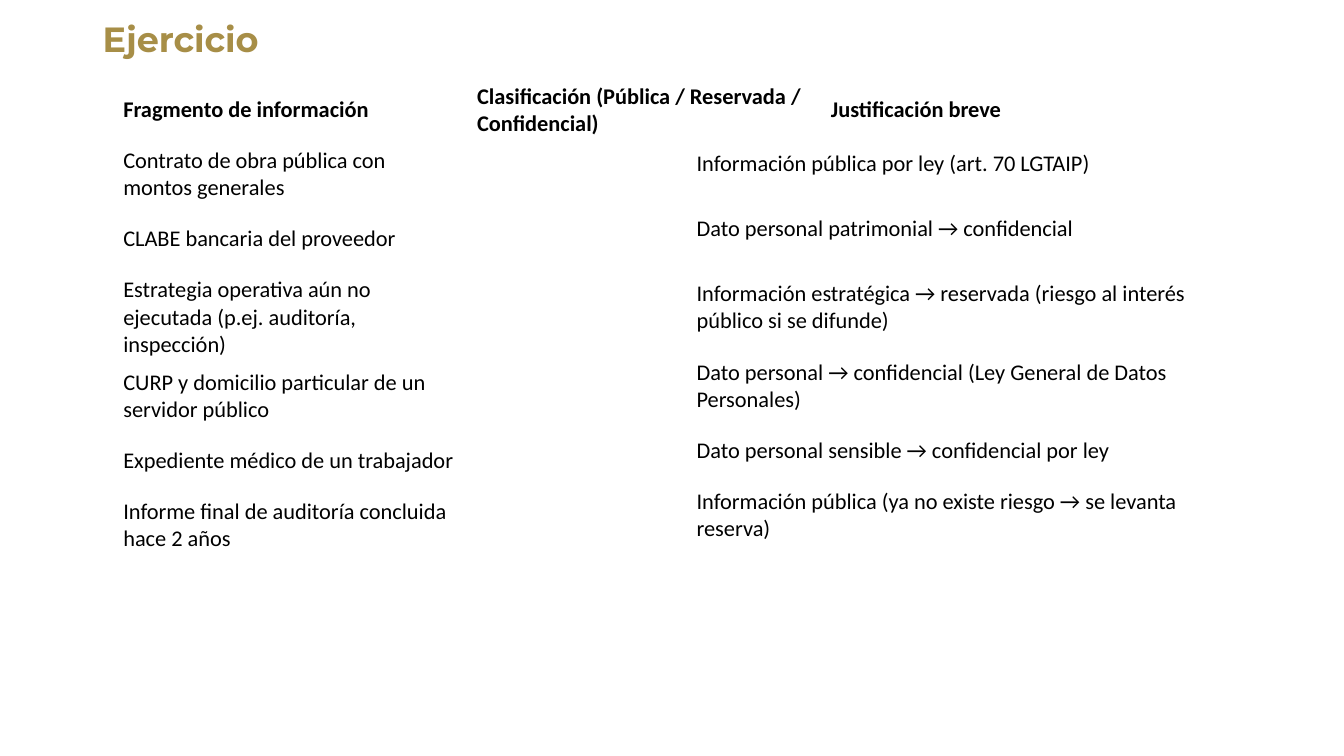
from pptx import Presentation
from pptx.dml.color import RGBColor
from pptx.enum.text import MSO_ANCHOR as Anchor
from pptx.util import Inches, Pt

GRID = 100
ROW, TALL_ROW = 8.53, 12.27

HEADINGS = [
    "Fragmento de información",
    "Clasificación (Pública / Reservada / Confidencial)",
    "Justificación breve",
]
EXERCISE = [
    ("Contrato de obra pública con montos generales",
     "Información pública por ley (art. 70 LGTAIP)", ROW),
    ("CLABE bancaria del proveedor",
     "Dato personal patrimonial → confidencial", ROW),
    ("Estrategia operativa aún no ejecutada (p.ej. auditoría, inspección)",
     "Información estratégica → reservada (riesgo al interés público si se difunde)", TALL_ROW),
    ("CURP y domicilio particular de un servidor público",
     "Dato personal → confidencial (Ley General de Datos Personales)", ROW),
    ("Expediente médico de un trabajador",
     "Dato personal sensible → confidencial por ley", ROW),
    ("Informe final de auditoría concluida hace 2 años",
     "Información pública (ya no existe riesgo → se levanta reserva)", ROW),
]


def color(code):
    return RGBColor.from_string(code)


class SlideBuilder:
    title_style = ("Montserrat", 25, "A78E47")
    body_style = ("Calibri", 16, "000000")

    def __init__(self, deck):
        self.column = deck.slide_width / GRID
        self.row = deck.slide_height / GRID
        self.page = deck.slides.add_slide(deck.slide_layouts[6])

    def area(self, left, top, width, height):
        return (round(left * self.column), round(top * self.row),
                round(width * self.column), round(height * self.row))

    def apply_font(self, font, style, bold):
        font.name, size, code = style
        font.size = Pt(size)
        font.color.rgb = color(code)
        font.bold = bold

    def add_text(self, para, text, style, bold=False):
        if text:
            span = para.add_run()
            span.text = text
            self.apply_font(span.font, style, bold)
        else:
            self.apply_font(para.font, style, bold)

    def title(self, text, *place):
        box = self.page.shapes.add_textbox(*self.area(*place))
        frame = box.text_frame
        frame.word_wrap = True
        frame.vertical_anchor = Anchor.MIDDLE
        para = frame.paragraphs[0]
        para.line_spacing = 0.9
        self.add_text(para, text, self.title_style, True)

    def table(self, records, heights, left, top, column_width, has_header=False):
        count = len(records[0])
        place = self.area(left, top, column_width * count, sum(heights))
        grid = self.page.shapes.add_table(len(records), count, *place).table
        grid.first_row = has_header
        grid.horz_banding = False
        for column in grid.columns:
            column.width = round(column_width * self.column)
        for index, (line, record, height) in enumerate(zip(grid.rows, records, heights)):
            line.height = round(height * self.row)
            for cell, text in zip(line.cells, record):
                cell.fill.background()
                cell.vertical_anchor = Anchor.MIDDLE
                cell.margin_left = cell.margin_right = Inches(0.09)
                self.add_text(cell.text_frame.paragraphs[0], text, self.body_style,
                              has_header and index == 0)


def main():
    deck = Presentation()
    deck.slide_width, deck.slide_height = Inches(13.33), Inches(7.5)
    slide = SlideBuilder(deck)
    heights = [height for _, _, height in EXERCISE]
    fragments = [HEADINGS] + [(fragment, "", "") for fragment, _, _ in EXERCISE]
    reasons = [(reason,) for _, reason, _ in EXERCISE]
    slide.title("Ejercicio", 6.9, 1.6, 86.27, 7.6)
    slide.table(fragments, [ROW] + heights, 8.5, 10.27, 26.33, has_header=True)
    slide.table(reasons, heights, 51.16, 17.47, 38.41)
    deck.save("out.pptx")


if __name__ == "__main__":
    main()
